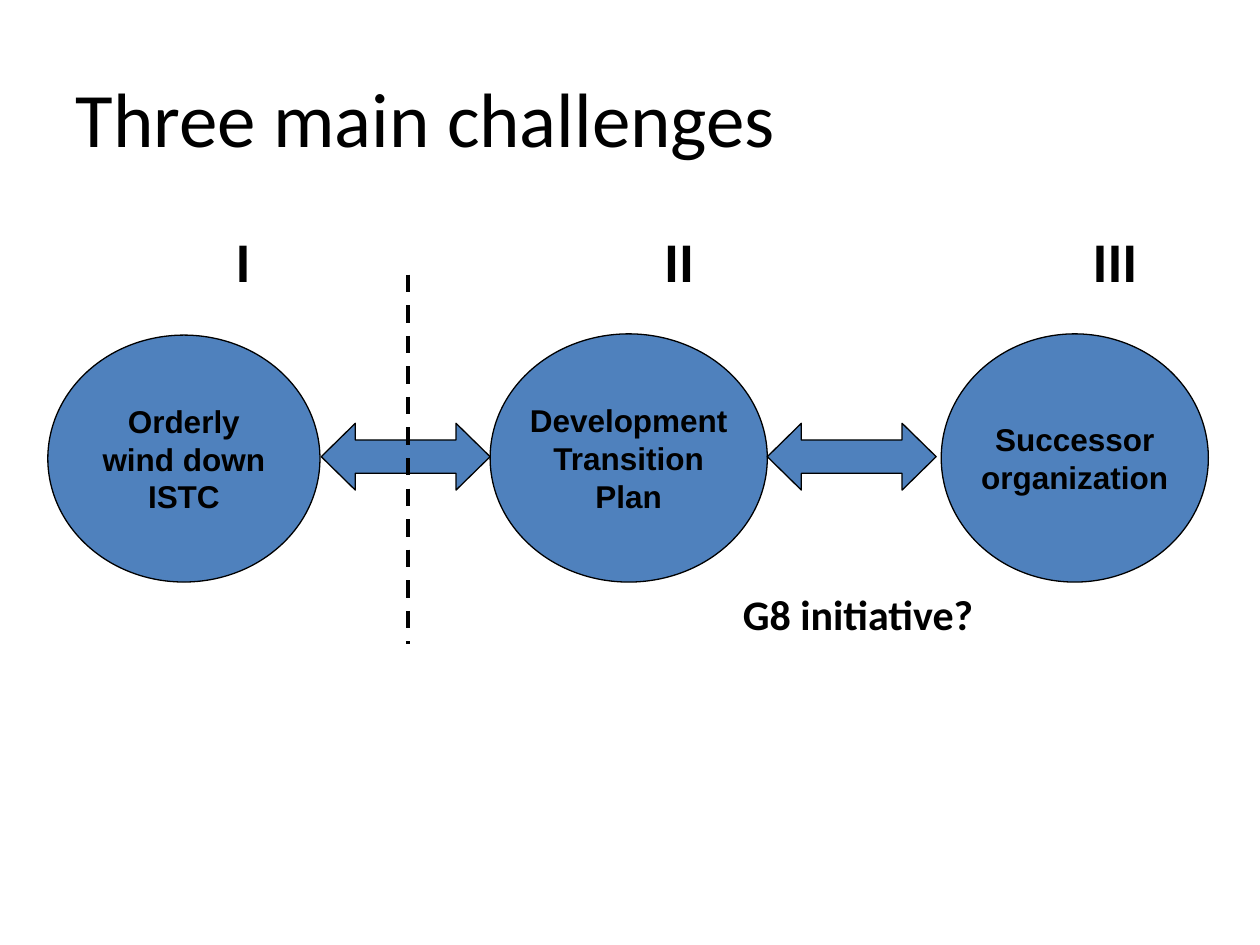
from lxml import etree
from pptx import Presentation
from pptx.dml.color import RGBColor
from pptx.enum.dml import MSO_LINE
from pptx.enum.shapes import MSO_CONNECTOR, MSO_SHAPE
from pptx.enum.text import MSO_ANCHOR, PP_ALIGN
from pptx.oxml.ns import qn
from pptx.util import Inches, Pt

COLORS = {"text": "000000", "line": "000000", "fill": "4F81BD"}


class SlideBuilder:
    heading_font = "Calibri"
    label_font = "Arial"

    def __init__(self, slide):
        self.slide = slide

    def color(self, name):
        return RGBColor.from_string(COLORS[name])

    def style(self, p, font, size, bold=False, align=PP_ALIGN.CENTER):
        p.alignment = align
        p.font.name = font
        p.font.size = Pt(size)
        p.font.bold = bold
        p.font.color.rgb = self.color("text")

    def title(self, text, left, top, width, height):
        sp = self.slide.shapes.title
        sp.left, sp.top = Inches(left), Inches(top)
        sp.width, sp.height = Inches(width), Inches(height)
        tf = sp.text_frame
        tf.text = text
        tf.vertical_anchor = MSO_ANCHOR.MIDDLE
        self.style(tf.paragraphs[0], self.heading_font, 44, align=PP_ALIGN.LEFT)

    def label(self, text, size, *box):
        tf = self.slide.shapes.add_textbox(*map(Inches, box)).text_frame
        tf.word_wrap = True
        tf.text = text
        self.style(tf.paragraphs[0], self.heading_font, size, bold=True)

    def shape(self, kind, *box):
        sp = self.slide.shapes.add_shape(kind, *map(Inches, box))
        sp.shadow.inherit = False
        sp.fill.solid()
        sp.fill.fore_color.rgb = self.color("fill")
        sp.line.color.rgb = self.color("line")
        sp.line.width = Pt(0.75)
        return sp

    def ellipse(self, lines, *box):
        tf = self.shape(MSO_SHAPE.OVAL, *box).text_frame
        tf.word_wrap = False
        tf.vertical_anchor = MSO_ANCHOR.MIDDLE
        tf.text = "\n".join(lines)
        for p in tf.paragraphs:
            self.style(p, self.label_font, 18, bold=True)

    def double_arrow(self, *box):
        sp = self.shape(MSO_SHAPE.LEFT_RIGHT_ARROW, *box)
        sp.adjustments[0] = 0.5
        sp.adjustments[1] = 0.51

    def dashed_line(self, x, top, bottom):
        line = self.slide.shapes.add_connector(
            MSO_CONNECTOR.STRAIGHT, Inches(x), Inches(top), Inches(x), Inches(bottom))
        line.line.color.rgb = self.color("line")
        line.line.width = Pt(2.5)
        line.line.dash_style = MSO_LINE.DASH
        etree.SubElement(line._element.spPr, qn("a:effectLst"))


def main():
    prs = Presentation()
    prs.slide_width, prs.slide_height = Inches(10), Inches(7.5)
    s = SlideBuilder(prs.slides.add_slide(prs.slide_layouts[5]))

    s.title("Three main challenges", 0.5, 0.3, 9, 1.25)
    for i, numeral in enumerate(["I", "II", "III"]):
        s.label(numeral, 32, 1.43 + 3.46 * i, 1.75, 1, 0.58)

    s.ellipse(["Orderly", "wind down", "ISTC"], 0.38, 2.66, 2.16, 1.96)
    s.ellipse(["Development", "Transition", "Plan"], 3.89, 2.65, 2.2, 1.97)
    s.ellipse(["Successor", "organization"], 7.47, 2.65, 2.12, 1.97)

    for left in (2.55, 6.09):
        s.double_arrow(left, 3.36, 1.34, 0.53)
    s.dashed_line(3.24, 2.18, 5.11)
    s.label("G8 initiative?", 24, 5.47, 4.62, 2.68, 0.5)

    prs.save("out.pptx")


if __name__ == "__main__":
    main()
